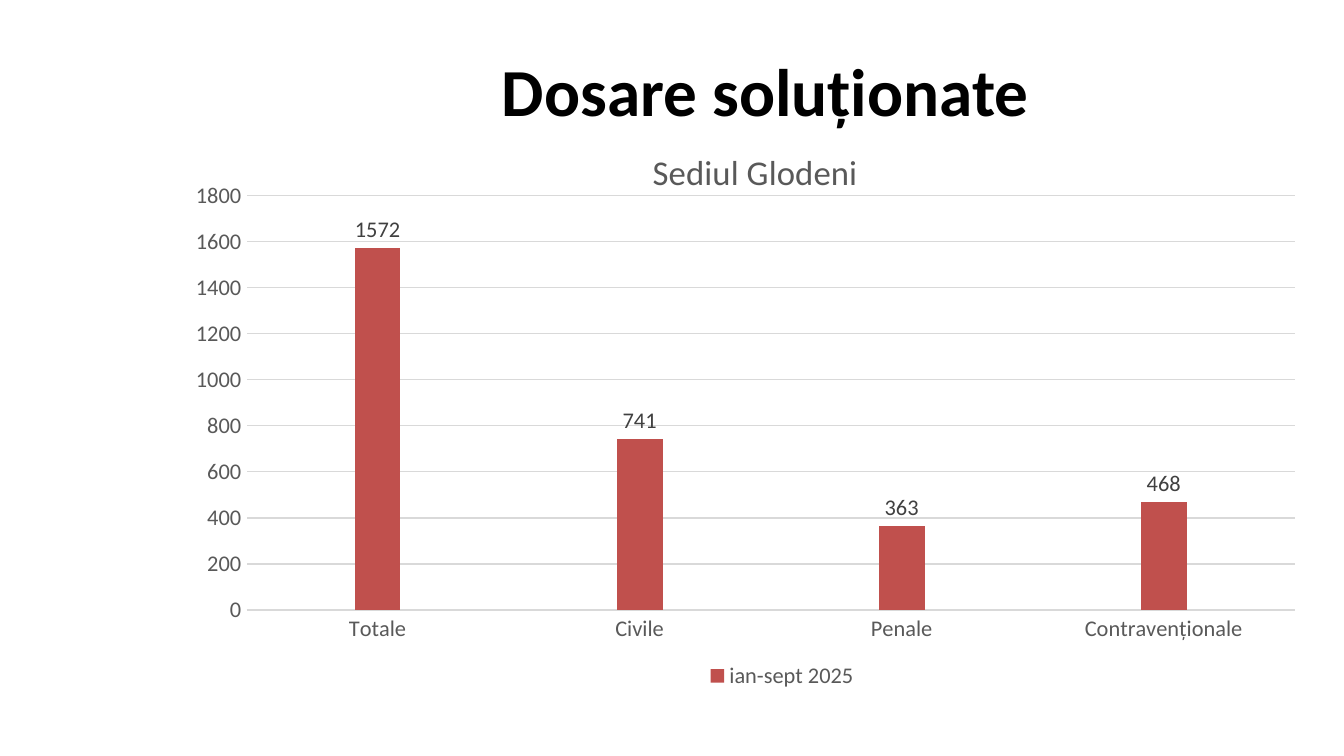
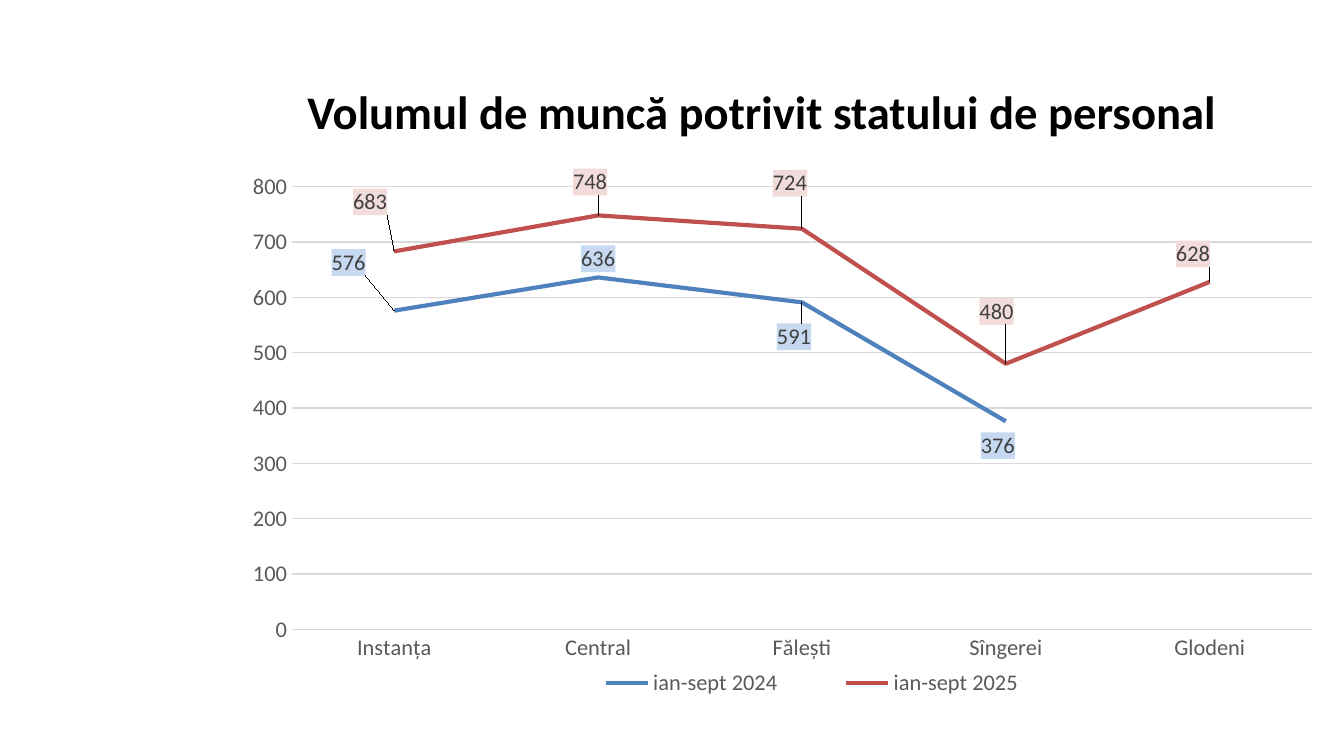
from dataclasses import dataclass

from lxml import etree
from pptx import Presentation
from pptx.chart.data import CategoryChartData
from pptx.dml.color import RGBColor
from pptx.enum.chart import XL_CHART_TYPE, XL_LABEL_POSITION, XL_LEGEND_POSITION, XL_TICK_MARK
from pptx.enum.text import MSO_ANCHOR, PP_ALIGN
from pptx.oxml import parse_xml
from pptx.oxml.ns import nsdecls, qn
from pptx.util import Pt

COLUMNS, LINES = XL_CHART_TYPE.COLUMN_CLUSTERED, XL_CHART_TYPE.LINE
ABOVE, OUTSIDE_END = XL_LABEL_POSITION.ABOVE, XL_LABEL_POSITION.OUTSIDE_END
BOTTOM, NO_TICK = XL_LEGEND_POSITION.BOTTOM, XL_TICK_MARK.NONE
TOP, MIDDLE, CENTER = MSO_ANCHOR.TOP, MSO_ANCHOR.MIDDLE, PP_ALIGN.CENTER

EMU_PER_PX = 4572  # 200 px to the inch


@dataclass(frozen=True)
class Theme:
    font: str = "Calibri"
    title: str = "000000"
    muted: str = "595959"
    label: str = "404040"
    grid: str = "D9D9D9"
    series: tuple = ("4F81BD", "C0504D", "9BBB59")
    label_fills: tuple = ("C6D9F1", "F2DCDB", None)
    chart_size: float = 12
    chart_title_size: float = 18.6
    grid_width: float = 0.75
    line_width: float = 2.25


THEME = Theme()


def px(*lengths):
    return [length * EMU_PER_PX for length in lengths]


def style_font(font, size, color, bold=False):
    font.name, font.size, font.bold = THEME.font, Pt(size), bold
    font.color.rgb = RGBColor.from_string(color)


def style_line(line, color, width):
    line.color.rgb = RGBColor.from_string(color)
    line.width = Pt(width)


def set_layout(parent, index, chart_size, place, inner=False, edge=True):
    """Place a chart part, given in px, as fractions of the chart's size."""
    for old in parent.findall(qn("c:layout")):
        parent.remove(old)
    layout = parse_xml(f"<c:layout {nsdecls('c')}><c:manualLayout/></c:layout>")
    settings = [("layoutTarget", "inner")] if inner else []
    if edge:
        settings += [("xMode", "edge"), ("yMode", "edge")]
    settings += [(key, str(length / full))
                 for key, length, full in zip("xywh", place, chart_size * 2)]
    for key, setting in settings:
        etree.SubElement(layout[0], qn(f"c:{key}")).set("val", setting)
    parent.insert(index, layout)


def add_title(slide, box, text, size, anchor):
    frame = slide.shapes.add_textbox(*px(*box)).text_frame
    frame.word_wrap = True
    frame.vertical_anchor = anchor
    heading = frame.paragraphs[0]
    heading.text, heading.alignment = text, CENTER
    style_font(heading.font, size, THEME.title, bold=True)


def style_axes(chart, top, step):
    for axis in (chart.category_axis, chart.value_axis):
        axis.major_tick_mark = axis.minor_tick_mark = NO_TICK
        style_font(axis.tick_labels.font, THEME.chart_size, THEME.muted)
    style_line(chart.category_axis.format.line, THEME.grid, THEME.grid_width)
    scale = chart.value_axis
    scale.minimum_scale, scale.maximum_scale, scale.major_unit = 0, top, step
    scale.format.line.fill.background()
    style_line(scale.major_gridlines.format.line, THEME.grid, THEME.grid_width)


def add_legend(chart, chart_size, place, hidden):
    chart.has_legend = True
    legend = chart.legend
    legend.position, legend.include_in_layout = BOTTOM, False
    style_font(legend.font, THEME.chart_size, THEME.muted)
    for order, index in enumerate(hidden, 1):
        legend._element.insert(order, parse_xml(
            f'<c:legendEntry {nsdecls("c")}><c:idx val="{index}"/>'
            '<c:delete val="1"/></c:legendEntry>'))
    set_layout(legend._element, 1 + len(hidden), chart_size, place)


def add_chart(slide, box, kind, categories, series, plot, legend, hidden, scale):
    """Draw a chart in box; plot and legend boxes are relative to it."""
    data = CategoryChartData()
    data.categories = categories
    for name, values in series:
        data.add_series(name, values)
    chart = slide.shapes.add_chart(kind, *px(*box), data).chart
    chart_size = box[2:]
    style_font(chart.font, THEME.chart_size, THEME.muted)
    chart.has_title = False
    chart.plots[0].vary_by_categories = False
    style_axes(chart, *scale)
    add_legend(chart, chart_size, legend, hidden)
    plot_area = chart._chartSpace.chart.plotArea
    set_layout(plot_area, 0, chart_size, plot, inner=True)
    return chart


def label_values(labels, position):
    style_font(labels.font, THEME.chart_size, THEME.label)
    labels.position = position


def label_series(series, position):
    label_values(series.data_labels, position)
    series.data_labels.show_value = True


def shift_labels(series, chart_size, shifts):
    """Move point labels by px from their usual places, without leader lines."""
    for index, shift in shifts.items():
        label_values(series.points[index].data_label, ABOVE)
        mark = series._element.xpath(f'c:dLbls/c:dLbl[c:idx/@val="{index}"]')[0]
        set_layout(mark, 1, chart_size, shift, edge=False)
    series.data_labels._element.append(parse_xml(
        f'<c:extLst {nsdecls("c")}><c:ext uri="{{CE6537A1-D6FC-4f65-9D91-7224C49458BB}}"'
        ' xmlns:c15="http://schemas.microsoft.com/office/drawing/2012/chart">'
        '<c15:showLeaderLines val="0"/></c:ext></c:extLst>'))


def fill_labels(series, color):
    for text in series._element.xpath("c:dLbls//c:txPr"):
        text.addprevious(parse_xml(
            f'<c:spPr {nsdecls("c", "a")}><a:solidFill>'
            f'<a:srgbClr val="{color}"/></a:solidFill></c:spPr>'))


def solved_cases_chart(slide, box):
    empty = [None] * 4
    chart = add_chart(
        slide, box, COLUMNS,
        ["Totale", "Civile", "Penale", "Contravenționale"],
        [("Series 1", empty), ("ian-sept 2025", [1572, 741, 363, 468]), ("Series 3", empty)],
        plot=(105, 97, 1560, 617), legend=(782, 786, 240, 52), hidden=[0, 2], scale=(1800, 200))

    # Chart heading
    chart.has_title = True
    heading = chart.chart_title.text_frame.paragraphs[0]
    heading.text = "Sediul Glodeni"
    style_font(heading.font, THEME.chart_title_size, THEME.muted)
    set_layout(chart.chart_title._element, 1, box[2:], (700, 16))

    # Columns
    columns = chart.plots[0]
    columns.gap_width, columns.overlap = 219, -27
    for series, color in zip(columns.series, THEME.series):
        series.format.fill.solid()
        series.format.fill.fore_color.rgb = RGBColor.from_string(color)
        label_series(series, OUTSIDE_END)


def workload_chart(slide, box):
    chart = add_chart(
        slide, box, LINES,
        ["Instanța", "Central", "Fălești", "Sîngerei", "Glodeni"],
        [("ian-sept 2024", [576, 636, 591, 376, None]),
         ("ian-sept 2025", [683, 748, 724, 480, 628]),
         ("Series 3", [None] * 5)],
        plot=(91, 36, 1517, 659), legend=(466, 748, 796, 54), hidden=[2], scale=(800, 100))

    # Lines and their shifted labels
    label_shifts = (
        {0: (-68, -44), 2: (-12, 79), 3: (-12, 64)},
        {0: (-36, -46), 1: (-12, -22), 2: (-18, -40), 3: (-14, -50), 4: (-25, -14)},
        {},
    )
    for series, color, fill, shifts in zip(
            chart.plots[0].series, THEME.series, THEME.label_fills, label_shifts):
        series.smooth = False
        style_line(series.format.line, color, THEME.line_width)
        label_series(series, ABOVE)
        shift_labels(series, box[2:], shifts)
        if fill:
            fill_labels(series, fill)


def main():
    deck = Presentation()
    deck.slide_width, deck.slide_height = px(2000, 1125)
    blank = deck.slide_layouts[6]

    # Solved cases
    solved = deck.slides.add_slide(blank)
    add_title(solved, (386, 63, 1506, 262), "Dosare soluționate", 36, TOP)
    solved_cases_chart(solved, (262, 194, 1694, 888))

    # Workload by staffing plan
    workload = deck.slides.add_slide(blank)
    add_title(workload, (382, 111, 1518, 108),
              "Volumul de muncă potrivit statului de personal ", 25, MIDDLE)
    workload_chart(workload, (344, 242, 1624, 808))

    deck.save("out.pptx")


if __name__ == "__main__":
    main()
